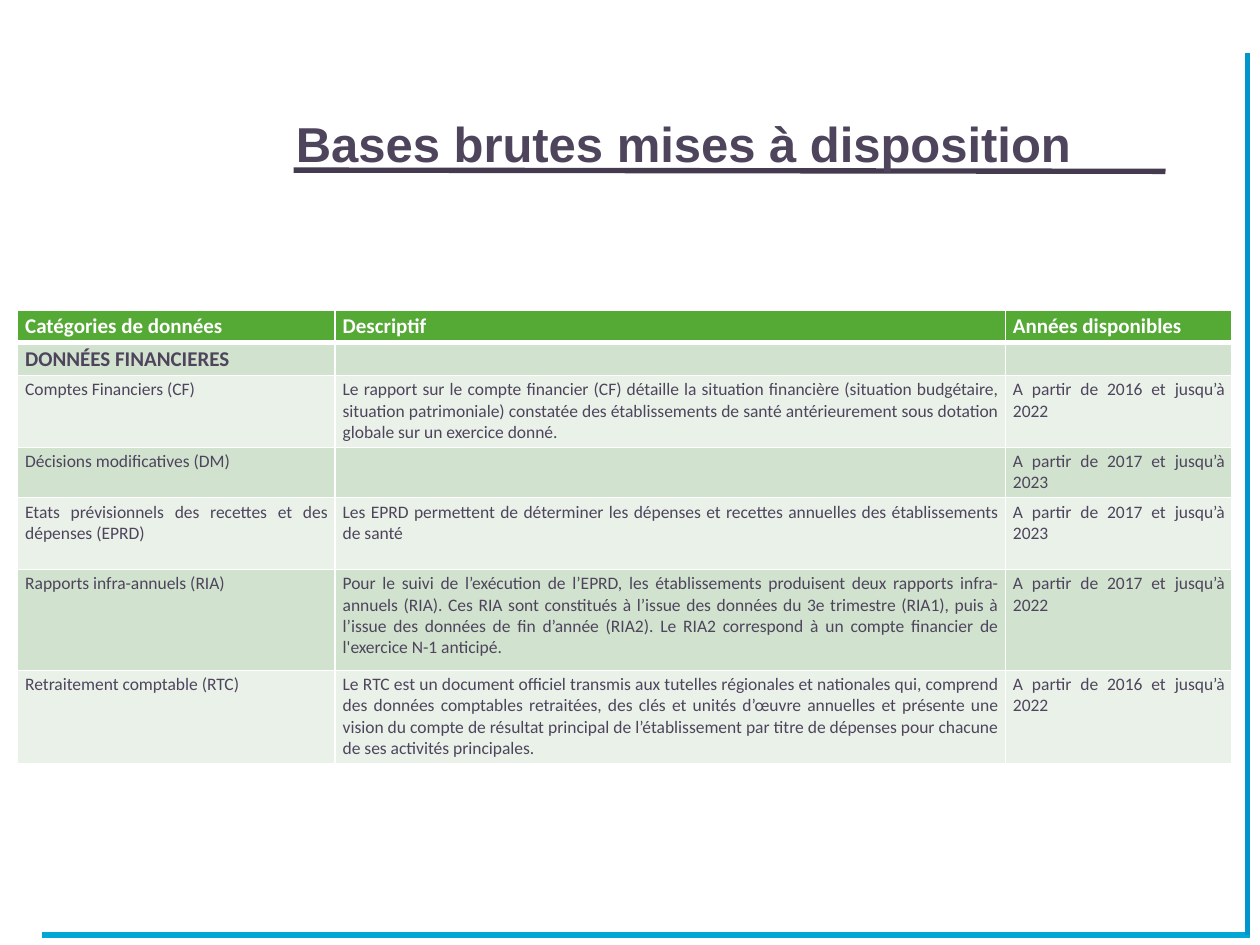
from lxml import etree
from pptx import Presentation
from pptx.dml.color import RGBColor
from pptx.enum.shapes import MSO_CONNECTOR
from pptx.enum.text import MSO_ANCHOR, PP_ALIGN
from pptx.oxml.ns import qn
from pptx.util import Inches, Pt

STRAIGHT = MSO_CONNECTOR.STRAIGHT
BOTTOM = MSO_ANCHOR.BOTTOM
JUSTIFY = PP_ALIGN.JUSTIFY

COLORS = {
    "text": "4E455D", "rule": "453B50", "cyan": "02A7D5", "blue": "0095CB",
    "white": "FFFFFF", "header": "55A935", "dark": "D1E2CE", "light": "E9F1E8",
}


def rgb(name):
    return RGBColor.from_string(COLORS[name])


def set_borders(cell, bottom_width):
    """Draw white cell borders; call before filling the cell."""
    tcPr = cell._tc.get_or_add_tcPr()
    for side, width in (("L", 1), ("R", 1), ("T", 1), ("B", bottom_width)):
        ln = etree.SubElement(tcPr, qn(f"a:ln{side}"), w=str(Pt(width)))
        fill = etree.SubElement(ln, qn("a:solidFill"))
        etree.SubElement(fill, qn("a:srgbClr"), val=COLORS["white"])


prs = Presentation()
prs.slide_width, prs.slide_height = Inches(10), Inches(7.5)
s = prs.slides.add_slide(prs.slide_layouts[6])

# Title rule and frame lines
for x1, y1, x2, y2, color in (
    (2.33, 1.35, 9.25, 1.36, "rule"),
    (0.33, 7.42, 9.92, 7.42, "cyan"),
    (9.9, 7.42, 9.9, 0.42, "blue"),
):
    line = s.shapes.add_connector(
        STRAIGHT, Inches(x1), Inches(y1), Inches(x2), Inches(y2))
    line.line.color.rgb = rgb(color)
    line.line.width = Pt(3.06)
    etree.SubElement(line._element.spPr, qn("a:effectLst"))

# Title
tf = s.shapes.add_textbox(
    Inches(2.25), Inches(0.33), Inches(6.67), Inches(1.09)).text_frame
tf.word_wrap = True
tf.vertical_anchor = BOTTOM
r = tf.paragraphs[0].add_run()
r.text = "Bases brutes mises à disposition"
r.font.name, r.font.size, r.font.bold = "Arial", Pt(28), True
r.font.color.rgb = rgb("text")

# Table: row height, then the three cell texts
rows = [
    (0.26, "Catégories de données", "Descriptif", "Années disponibles"),
    (0.26, "DONNÉES FINANCIERES", "", ""),
    (0.57, "Comptes Financiers (CF)",
     "Le rapport sur le compte financier (CF) détaille la situation financière "
     "(situation budgétaire, situation patrimoniale) constatée des établissements "
     "de santé antérieurement sous dotation globale sur un exercice donné.",
     "A partir de 2016 et jusqu’à 2022"),
    (0.4, "Décisions modificatives (DM)", "", "A partir de 2017 et jusqu’à 2023"),
    (0.57, "Etats prévisionnels des recettes et des dépenses (EPRD)",
     "Les EPRD permettent de déterminer les dépenses et recettes annuelles des "
     "établissements de santé",
     "A partir de 2017 et jusqu’à 2023"),
    (0.8, "Rapports infra-annuels (RIA)",
     "Pour le suivi de l’exécution de l’EPRD, les établissements produisent deux "
     "rapports infra-annuels (RIA). Ces RIA sont constitués à l’issue des données "
     "du 3e trimestre (RIA1), puis à l’issue des données de fin d’année (RIA2). "
     "Le RIA2 correspond à un compte financier de l'exercice N-1 anticipé.",
     "A partir de 2017 et jusqu’à 2022"),
    (0.74, "Retraitement comptable (RTC)",
     "Le RTC est un document officiel transmis aux tutelles régionales et "
     "nationales qui, comprend des données comptables retraitées, des clés et "
     "unités d’œuvre annuelles et présente une vision du compte de résultat "
     "principal de l’établissement par titre de dépenses pour chacune de ses "
     "activités principales.",
     "A partir de 2016 et jusqu’à 2022"),
]
col_widths = (2.52, 5.32, 1.8)
table = s.shapes.add_table(
    len(rows), len(col_widths), Inches(0.14), Inches(2.46),
    Inches(sum(col_widths)), Inches(sum(row[0] for row in rows))).table
for column, width in zip(table.columns, col_widths):
    column.width = Inches(width)

for i, (height, *texts) in enumerate(rows):
    table.rows[i].height = Inches(height)
    background = "header" if i == 0 else "dark" if i % 2 else "light"
    for j, text in enumerate(texts):
        cell = table.cell(i, j)
        set_borders(cell, 3 if i == 0 else 1)
        cell.fill.solid()
        cell.fill.fore_color.rgb = rgb(background)
        cell.margin_left = cell.margin_right = Inches(0.06)
        cell.margin_top = cell.margin_bottom = Inches(0.03)
        p = cell.text_frame.paragraphs[0]
        p.alignment = JUSTIFY
        if not text:
            # Keeps an empty cell from stretching its row
            etree.SubElement(p._p, qn("a:endParaRPr"), sz="1000")
            continue
        r = p.add_run()
        r.text = text
        r.font.name = "Calibri"
        r.font.size = Pt(12 if i < 2 else 10)
        r.font.bold = i < 2
        r.font.color.rgb = rgb("white" if i == 0 else "text")

prs.save("out.pptx")
